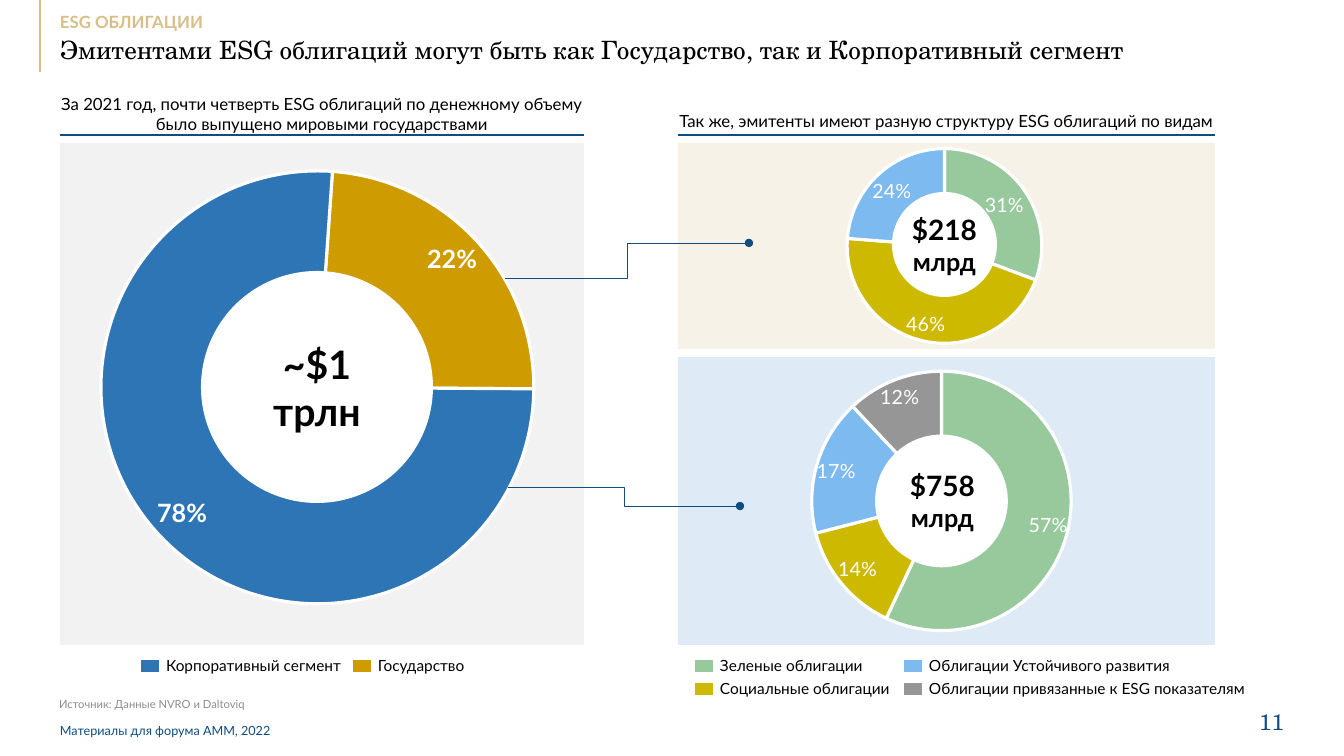
import dataclasses

import lxml.etree
import pptx
import pptx.chart.data
import pptx.dml.color
import pptx.enum.chart
import pptx.enum.shapes
import pptx.enum.text
import pptx.oxml.ns
import pptx.util

Align = pptx.enum.text.PP_ALIGN
Anchor = pptx.enum.text.MSO_ANCHOR
ShapeKind = pptx.enum.shapes.MSO_SHAPE
LineKind = pptx.enum.shapes.MSO_CONNECTOR
ChartKind = pptx.enum.chart.XL_CHART_TYPE
qn = pptx.oxml.ns.qn


@dataclasses.dataclass(frozen=True)
class Theme:
    """Colours, fonts and type sizes of the slide."""
    navy: str = "0F4C81"
    sand: str = "D8BE88"
    black: str = "000000"
    white: str = "FFFFFF"
    muted: str = "8C8C8C"
    corporate: str = "2E75B6"
    state: str = "CE9B00"
    green: str = "97C99D"
    social: str = "CDB900"
    sustainable: str = "7CBAF0"
    linked: str = "969696"
    panel: str = "F2F2F2"
    state_panel: str = "F7F2E7"
    corporate_panel: str = "DEEBF7"
    sans: str = "Lato"
    serif: str = "TeX Gyre Schola"
    source: int = 8
    footer: int = 9
    legend: int = 11
    body: int = 12
    value: int = 14
    page: int = 16
    title: int = 18
    unit: int = 18
    amount: int = 20
    total: int = 28


THEME = Theme()


def px(length):
    """Turn slide pixels into EMU."""
    return pptx.util.Emu(round(length * 914400 / 100.8))


def rgb(colour):
    """Turn a hex string into a colour."""
    return pptx.dml.color.RGBColor.from_string(colour)


def write(shape, text, size=THEME.body, font=THEME.sans, colour=THEME.black, bold=False,
          align=Align.LEFT, anchor=Anchor.MIDDLE, wrap=False, spacing=1.0, inset=0):
    """Fill a shape with text; size is one number or one per paragraph."""
    frame = shape.text_frame
    frame.text = text
    frame.word_wrap = wrap
    frame.vertical_anchor = anchor
    frame.auto_size = pptx.enum.text.MSO_AUTO_SIZE.NONE
    frame.margin_left = frame.margin_right = px(inset)
    frame.margin_top = frame.margin_bottom = px(inset)
    sizes = size if isinstance(size, tuple) else (size,) * len(frame.paragraphs)
    for paragraph, points in zip(frame.paragraphs, sizes):
        paragraph.alignment = align
        paragraph.line_spacing = spacing
        paragraph.font.size = pptx.util.Pt(points)
        paragraph.font.name = font
        paragraph.font.bold = bold
        paragraph.font.color.rgb = rgb(colour)


def add_text(slide, text, box, **style):
    """Add a text box."""
    write(slide.shapes.add_textbox(*map(px, box)), text, **style)


def add_block(slide, box, fill, kind=ShapeKind.RECTANGLE, outline=None):
    """Add a filled shape with an optional outline."""
    shape = slide.shapes.add_shape(kind, *map(px, box))
    shape.shadow.inherit = False
    shape.fill.solid()
    shape.fill.fore_color.rgb = rgb(fill)
    if outline:
        shape.line.color.rgb = rgb(outline)
        shape.line.width = pptx.util.Pt(2.25)
    else:
        shape.line.fill.background()
    return shape


def add_line(slide, start, end, width, colour=THEME.navy, kind=LineKind.STRAIGHT, dot=False):
    """Add a connector, with a dot at its end if asked."""
    connector = slide.shapes.add_connector(kind, *map(px, (*start, *end)))
    connector.line.color.rgb = rgb(colour)
    connector.line.width = pptx.util.Pt(width)
    properties = connector.element.spPr
    if dot:
        lxml.etree.SubElement(properties.find(qn("a:ln")), qn("a:tailEnd"), type="oval")
    lxml.etree.SubElement(properties, qn("a:effectLst"))


def make_layout(**values):
    """Build a manual chart layout element."""
    layout = lxml.etree.Element(qn("c:layout"))
    manual = lxml.etree.SubElement(layout, qn("c:manualLayout"))
    for name, value in values.items():
        lxml.etree.SubElement(manual, qn(f"c:{name}"), val=str(value))
    return layout


def add_round_chart(slide, kind, box, margins, slices, start=0, offsets=()):
    """Add a pie or ring of (value, colour) slices; offsets shift the value labels."""
    data = pptx.chart.data.CategoryChartData()
    data.categories = [str(number + 1) for number in range(len(slices))]
    data.add_series("Series 1", [value for value, colour in slices])
    chart = slide.shapes.add_chart(kind, *map(px, box), data).chart
    chart.has_legend = chart.has_title = False
    chart.font.size = pptx.util.Pt(10)
    chart.font.name = THEME.sans
    chart.font.color.rgb = rgb(THEME.black)
    plot = chart.plots[0]
    plot.vary_by_categories = True
    series = plot.series[0]
    for index, (value, colour) in enumerate(slices):
        point = series.points[index].format
        point.fill.solid()
        point.fill.fore_color.rgb = rgb(colour)
        point.line.color.rgb = rgb(THEME.white)
        point.line.width = pptx.util.Pt(2.25)
    if offsets:
        series.data_labels.show_value = False
    for index in range(len(offsets)):
        font = series.points[index].data_label.font
        font.size = pptx.util.Pt(THEME.value)
        font.name = THEME.sans
        font.color.rgb = rgb(THEME.white)
    for label, (right, down) in zip(chart.element.xpath(".//c:dLbl"), offsets):
        label.insert(1, make_layout(x=round(right / box[2], 2), y=round(down / box[3], 2)))
        number = lxml.etree.Element(qn("c:numFmt"), formatCode='0"%"', sourceLinked="0")
        label.insert(2, number)
    area = chart.element.xpath(".//c:plotArea")[0]
    for layout in area.findall(qn("c:layout")):
        area.remove(layout)
    across, down = margins
    area.insert(0, make_layout(layoutTarget="inner", xMode="edge", yMode="edge", x=across, y=down,
                               w=round(1 - 2 * across, 2), h=round(1 - 2 * down, 2)))
    for hole in area.iter(qn("c:holeSize")):
        hole.set("val", "44")
    if start:
        pie = area.find(qn("c:pieChart"))
        lxml.etree.SubElement(pie, qn("c:firstSliceAng"), val=str(start))


def add_legend(slide, left, top, entries):
    """Place (label, colour, column offset, row) entries."""
    for label, colour, column, row in entries:
        x, y = left + column, top + 23 * row
        add_block(slide, (x, y, 22, 16), colour, outline=THEME.white)
        add_text(slide, label, (x + 27, y, 320, 16), size=THEME.legend, spacing=0.9)


def add_heading(slide, text, box, **style):
    """Place a centred column heading above a rule."""
    left, top, width, height = box
    add_text(slide, text, box, align=Align.CENTER, **style)
    add_line(slide, (left, 135), (left + width, 135), 1)


def add_header(slide, left, top):
    """Place the accent line, section name and title."""
    add_line(slide, (left - 20, top - 15), (left - 20, top + 58), 1.25, THEME.sand)
    add_text(slide, "ESG ОБЛИГАЦИИ", (left, top, 1120, 18), colour=THEME.sand, bold=True,
             anchor=Anchor.TOP, spacing=0.9)
    title = slide.shapes.title
    title.left, title.top, title.width, title.height = map(px, (left, top + 24, 1120, 27))
    write(title, "Эмитентами ESG облигаций могут быть как Государство, так и Корпоративный сегмент",
          size=THEME.title, font=THEME.serif, anchor=Anchor.TOP, wrap=True, spacing=0.9)


def add_issuers(slide, left, top, width, height):
    """Place the panel that splits the market by issuer."""
    add_heading(slide, "За 2021 год, почти четверть ESG облигаций по денежному "
                "объему было выпущено мировыми государствами", (left, top - 47, width, 36), wrap=True)
    add_block(slide, (left, top, width, height), THEME.panel)
    add_round_chart(slide, ChartKind.PIE, (left + 32, top + 19, 451, 451), (0.02, 0.02),
                    [(24, THEME.state), (76, THEME.corporate)], start=4)
    for text, x, y in (("22%", 363, 104), ("78%", 93, 358)):
        add_text(slide, text, (left + x, top + y, 58, 27), size=THEME.title, bold=True,
                 colour=THEME.white, align=Align.CENTER, spacing=0.9)
    hole = add_block(slide, (left + 141, top + 128, 232, 232), THEME.white, ShapeKind.OVAL)
    write(hole, "~$1 трлн", size=THEME.total, bold=True, align=Align.CENTER, wrap=True, inset=4)
    add_legend(slide, left + 79, top + height + 13, [
        ("Корпоративный сегмент", THEME.corporate, 0, 0), ("Государство", THEME.state, 212, 0)])


def add_structure(slide, box, fill, chart, margins, hole, amount, values, offsets):
    """Place one panel with a ring of bond kinds around an amount."""
    left, top = box[:2]
    colours = (THEME.green, THEME.social, THEME.sustainable, THEME.linked)
    add_block(slide, box, fill)
    add_round_chart(slide, ChartKind.DOUGHNUT, (left + chart[0], top + chart[1], *chart[2:]),
                    margins, list(zip(values, colours)), offsets=offsets)
    x, y, diameter = hole
    centre = add_block(slide, (left + x, top + y, diameter, diameter), THEME.white, ShapeKind.OVAL)
    write(centre, f"{amount}\nмлрд", size=(THEME.amount, THEME.unit), bold=True,
          align=Align.CENTER, inset=4)


def add_kinds(slide, left, top, width):
    """Place the heading, both structure panels and their legend."""
    add_heading(slide, "Так же, эмитенты имеют разную структуру ESG облигаций по видам",
                (left, top - 33, width, 22))
    add_structure(slide, (left, top, width, 206), THEME.state_panel, (119, -4, 295, 214),
                  (0.17, 0.04), (214, 49, 105), "$218", (31, 46, 24, 0),
                  ((1, -1), (-2, 7), (-2, -3)))
    add_structure(slide, (left, top + 214, width, 288), THEME.corporate_panel, (116, 6, 295, 276),
                  (0.06, 0.03), (200, 79, 129), "$758", (57, 14, 17, 12),
                  ((11, 2), (-9, 6), (-11, -3), (-6, -14)))
    add_legend(slide, left + 15, top + 515, [
        ("Зеленые облигации", THEME.green, 0, 0),
        ("Социальные облигации", THEME.social, 0, 1),
        ("Облигации Устойчивого развития", THEME.sustainable, 209, 0),
        ("Облигации привязанные к ESG показателям", THEME.linked, 209, 1)])


def add_footer(slide, left, top):
    """Place the source, the event name and the page number."""
    add_text(slide, "Источник: Данные NVRO и Daltoviq", (left - 1, top, 1179, 13),
             size=THEME.source, colour=THEME.muted, anchor=Anchor.BOTTOM)
    add_text(slide, "Материалы для форума АММ, 2022", (left, top + 25, 674, 15),
             size=THEME.footer, colour=THEME.navy)
    add_text(slide, "11", (left + 1178, top + 10, 46, 27), size=THEME.page, font=THEME.serif,
             colour=THEME.navy, align=Align.RIGHT)


def main():
    """Build the slide and save it."""
    presentation = pptx.Presentation()
    presentation.slide_width, presentation.slide_height = px(1344), px(756)
    slide = presentation.slides.add_slide(presentation.slide_layouts[5])
    add_header(slide, 60, 14)
    add_issuers(slide, 60, 143, 524, 502)
    add_kinds(slide, 678, 143, 537)
    for start, end in (((505, 278), (749, 243)), ((508, 487), (740, 506))):
        add_line(slide, start, end, 0.5, kind=LineKind.ELBOW, dot=True)
    add_footer(slide, 60, 698)
    presentation.save("out.pptx")


if __name__ == "__main__":
    main()
